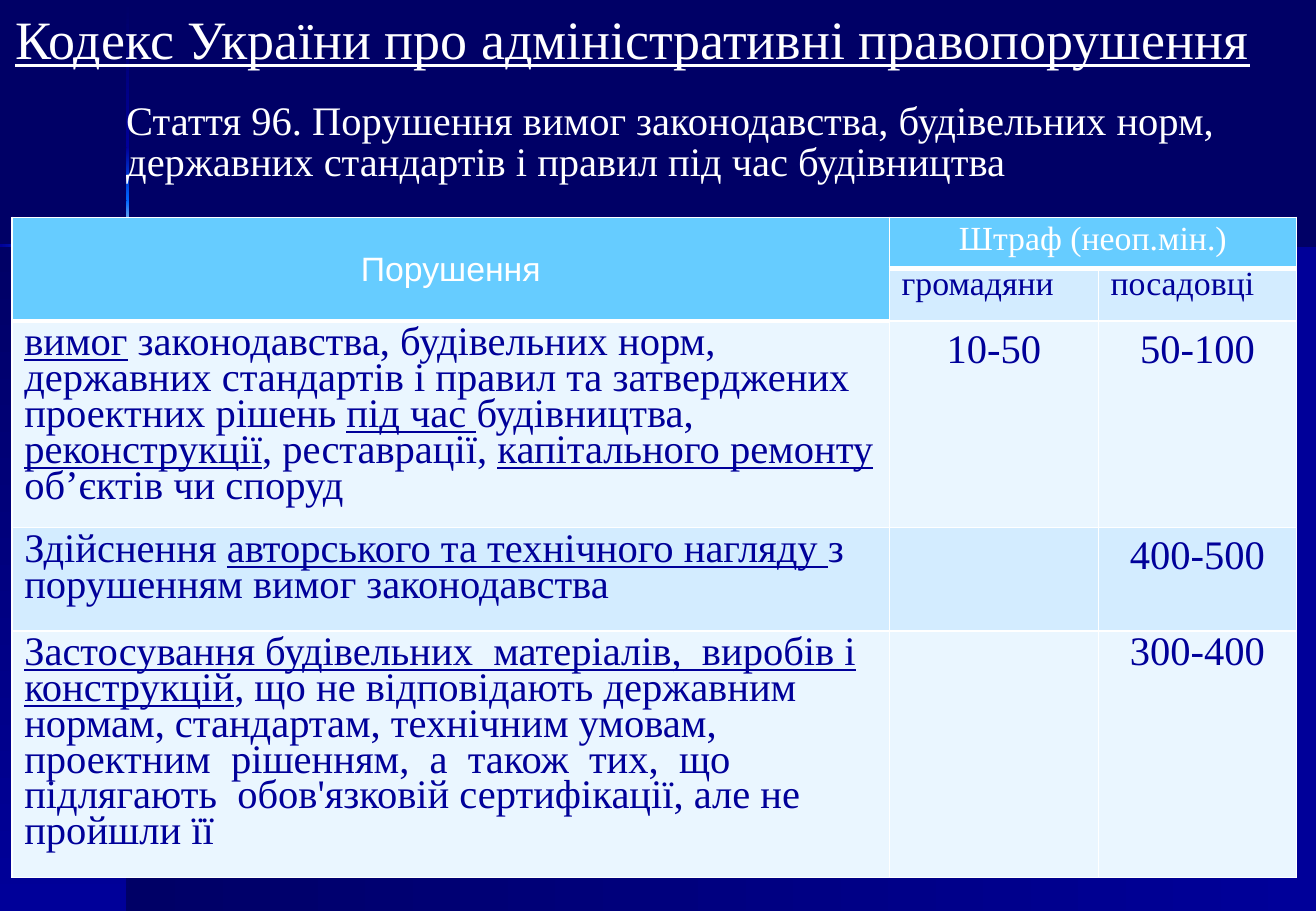
"""Build the slide on Article 96 of the code, with its table of fines."""
from lxml.etree import SubElement
from pptx import Presentation
from pptx.dml.color import RGBColor
from pptx.enum.shapes import MSO_SHAPE
from pptx.enum.text import MSO_ANCHOR, PP_ALIGN
from pptx.oxml.ns import qn
from pptx.util import Inches, Pt

TITLE = "_Кодекс України про адміністративні правопорушення _"
ARTICLE = ("Стаття 96. Порушення вимог законодавства, будівельних норм, "
           "державних стандартів і правил під час будівництва")
ROWS = [
    ("Порушення", "Штраф (неоп.мін.)", ""),
    ("", "громадяни", "посадовці"),
    ("_вимог_ законодавства, будівельних норм, державних стандартів і правил "
     "та затверджених проектних рішень _під час _будівництва, "
     "_реконструкції_, реставрації, _капітального ремонту _"
     "об’єктів чи споруд", "10-50", "50-100"),
    ("Здійснення _авторського та технічного нагляду _з порушенням вимог "
     "законодавства", "", "400-500"),
    ("_Застосування будівельних  матеріалів,  виробів і конструкцій_, що не "
     "відповідають державним нормам, стандартам, технічним умовам, проектним  "
     "рішенням,  а  також  тих,  що  підлягають  обов'язковій сертифікації, "
     "але не пройшли її", "", "300-400"),
]
COL_WIDTHS = [7.22, 1.72, 1.63]
ROW_HEIGHTS = [0.42, 0.42, 1.7, 0.85, 2.03]
MERGES = [((0, 0), (1, 0)), ((0, 1), (0, 2))]

THEME = {
    "dark": "000066", "mid": "000099", "bright": "0066FF", "glow": "FFFFCC",
    "white": "FFFFFF", "header": "66CCFF", "band": "D3ECFF", "pale": "EAF6FF",
    "serif": "Times New Roman", "sans": "Arial",
    "title": 32, "body": 24, "head": 20, "thin": 1, "thick": 3,
}
WIDTH, HEIGHT = 10.83, 7.5
PANEL_X, PANEL_Y, BAR = 1.05, 2.02, 0.02
ROW_FILLS = ["header", "band", "pale", "band", "pale"]
BAR_FADES = [("dark", "mid"), ("mid", "bright"), ("bright", "glow", "bright"),
             ("bright", "mid"), ("mid", "dark")]
BAR_YS = [0.01, 1.21, 1.65, 2.38, 2.82, HEIGHT]
BAR_XS = [0, 0.66, 1.44, 1.92, WIDTH]


def color(name):
    return RGBColor.from_string(THEME[name])


def add_fade(slide, box, names, angle):
    sp = slide.shapes.add_shape(MSO_SHAPE.RECTANGLE, *map(Inches, box))
    sp.shadow.inherit = False
    sp.line.fill.background()
    sp.fill.gradient()
    sp.fill.gradient_angle = angle
    stops = sp._element.spPr.find(".//" + qn("a:gsLst"))
    for old in list(stops):
        stops.remove(old)
    for i, name in enumerate(names):
        gs = SubElement(stops, qn("a:gs"), pos=str(100000 * i // (len(names) - 1)))
        SubElement(gs, qn("a:srgbClr"), val=THEME[name])


def write(tf, text, size, ink, face="serif", **paragraph):
    p = tf.paragraphs[0]
    for key, value in paragraph.items():
        setattr(p, key, value)
    for i, part in enumerate(text.split("_")):
        if part:
            r = p.add_run()
            r.text = part
            r.font.color.rgb = color(ink)
            style = {"size": Pt(THEME[size]), "name": THEME[face],
                     "underline": i % 2 == 1}
            for key, value in style.items():
                setattr(r.font, key, value)


def add_text(slide, box, text, size, **paragraph):
    tf = slide.shapes.add_textbox(*map(Inches, box)).text_frame
    tf.word_wrap = True
    write(tf, text, size, "white", **paragraph)


def add_borders(cell, top, bottom):
    tc_pr = cell._tc.get_or_add_tcPr()
    widths = {"lnL": "thin", "lnR": "thin", "lnT": top, "lnB": bottom}
    for side, weight in widths.items():
        ln = SubElement(tc_pr, qn("a:" + side), w=str(Pt(THEME[weight])))
        fill = SubElement(ln, qn("a:solidFill"))
        SubElement(fill, qn("a:srgbClr"), val=THEME["white"])


def cell_format(row, col):
    is_head = row == 0
    fmt = {"size": "head" if row < 2 else "body",
           "ink": "white" if is_head else "mid",
           "face": "sans" if is_head and col == 0 else "serif"}
    if is_head or (row > 1 and col > 0):
        fmt["alignment"] = PP_ALIGN.CENTER
    if row < 2 and col > 0:
        fmt["line_spacing"] = 0.7
    elif row > 1 and (col == 0 or row == 4):
        fmt["line_spacing"] = 0.8
    return fmt


def add_fines(slide):
    box = (0.1, 1.79, sum(COL_WIDTHS), sum(ROW_HEIGHTS))
    table = slide.shapes.add_table(len(ROWS), len(COL_WIDTHS),
                                   *map(Inches, box)).table
    table.first_row = table.horz_banding = False
    for column, width in zip(table.columns, COL_WIDTHS):
        column.width = Inches(width)
    for row, height in zip(table.rows, ROW_HEIGHTS):
        row.height = Inches(height)
    for start, end in MERGES:
        table.cell(*start).merge(table.cell(*end))
    for i, texts in enumerate(ROWS):
        for j, text in enumerate(texts):
            cell = table.cell(i, j)
            head_end = 2 if j == 0 else 1
            add_borders(cell, "thick" if i == head_end else "thin",
                        "thick" if i < head_end else "thin")
            cell.fill.solid()
            cell.fill.fore_color.rgb = color("header" if i < head_end else ROW_FILLS[i])
            if i == 0:
                cell.vertical_anchor = MSO_ANCHOR.MIDDLE
            if text:
                write(cell.text_frame, text, **cell_format(i, j))


def main():
    prs = Presentation()
    prs.slide_width, prs.slide_height = Inches(WIDTH), Inches(HEIGHT)
    s = prs.slides.add_slide(prs.slide_layouts[6])
    s.background.fill.solid()
    s.background.fill.fore_color.rgb = color("dark")

    panel_h = HEIGHT - PANEL_Y
    add_fade(s, (PANEL_X, PANEL_Y, WIDTH - PANEL_X, panel_h), ("dark", "mid"), 0)
    add_fade(s, (0, PANEL_Y, PANEL_X, panel_h), ("dark", "mid"), 270)
    for y, end, fade in zip(BAR_YS, BAR_YS[1:], BAR_FADES):
        add_fade(s, (PANEL_X - BAR / 2, y, BAR, end - y), fade, 270)
    for x, end, fade in zip(BAR_XS, BAR_XS[1:], BAR_FADES[1:]):
        add_fade(s, (x, PANEL_Y - BAR / 2, end - x, BAR), fade, 0)

    add_text(s, (0, 0, 10.41, 0.64), TITLE, "title", alignment=PP_ALIGN.CENTER)
    add_text(s, (0.94, 0.8, 9.22, 0.78), ARTICLE, "body",
             line_spacing=Pt(24), space_before=Pt(12))
    add_fines(s)
    prs.save("out.pptx")


if __name__ == "__main__":
    main()
